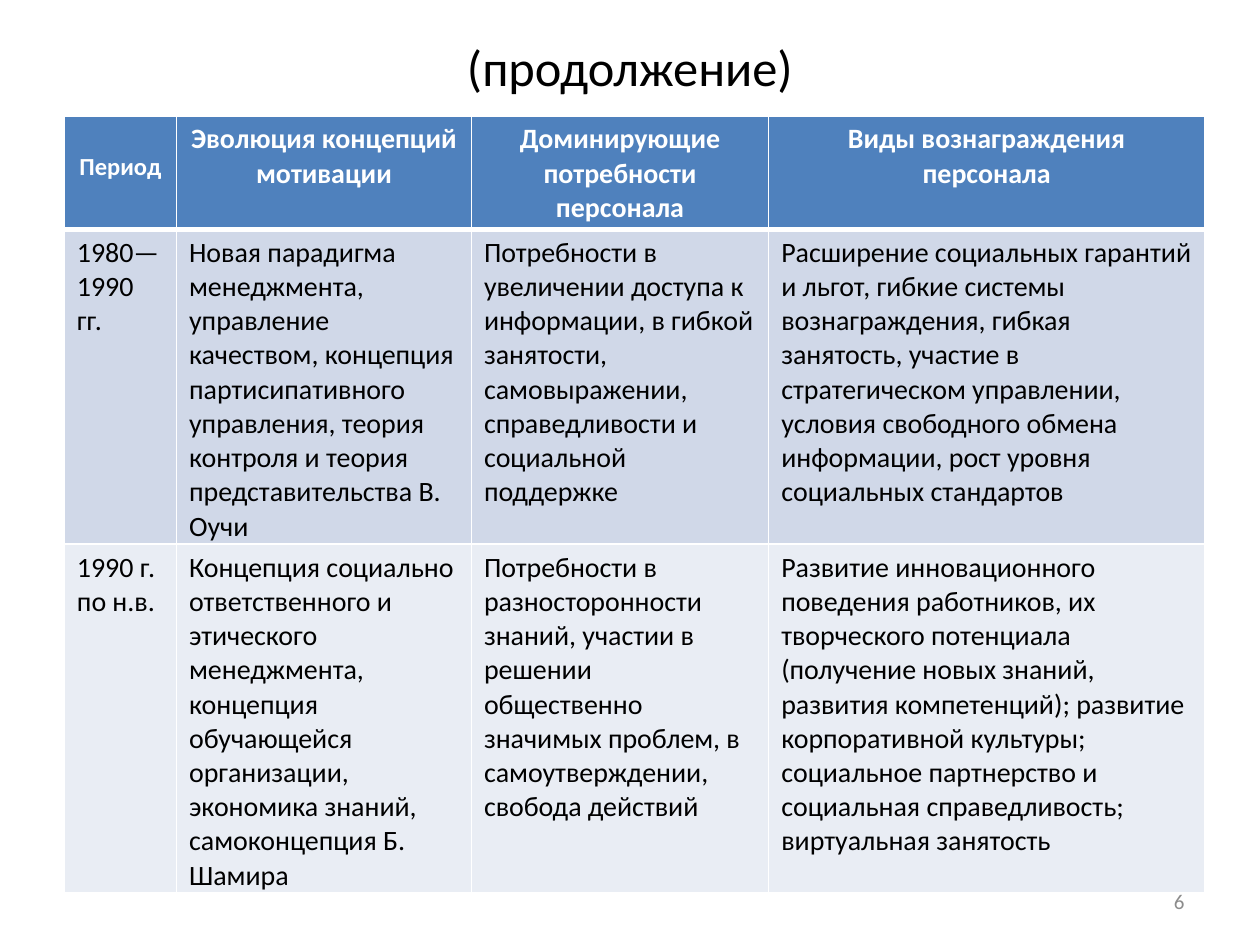
from lxml.etree import SubElement
from pptx import Presentation
from pptx.dml.color import RGBColor as RGB
from pptx.enum.text import MSO_ANCHOR as Anchor, PP_ALIGN as Align
from pptx.oxml.ns import qn
from pptx.util import Pt

COLORS = {"black": "000000", "white": "FFFFFF", "gray": "8C8C8C",
          "header": "4F81BD", "odd": "D0D8E8", "even": "E9EDF4"}
FONT = "Calibri"
TITLE = "(продолжение)"
PAGE_NUMBER = "6"
HEADERS = ["Период", "Эволюция концепций мотивации",
           "Доминирующие потребности персонала", "Виды вознаграждения персонала"]
PERIODS = [
    ["1980— 1990 гг.",
     "Новая парадигма менеджмента, управление качеством, концепция партисипативного "
     "управления, теория контроля и теория представительства В. Оучи",
     "Потребности в увеличении доступа к информации, в гибкой занятости, "
     "самовыражении, справедливости и социальной поддержке",
     "Расширение социальных гарантий и льгот, гибкие системы вознаграждения, гибкая "
     "занятость, участие в стратегическом управлении, условия свободного обмена "
     "информации, рост уровня социальных стандартов"],
    ["1990 г. по н.в.",
     "Концепция социально ответственного и этического менеджмента, концепция "
     "обучающейся организации, экономика знаний, самоконцепция Б. Шамира",
     "Потребности в разносторонности знаний, участии в решении общественно значимых "
     "проблем, в самоутверждении, свобода действий",
     "Развитие инновационного поведения работников, их творческого потенциала "
     "(получение новых знаний, развития компетенций); развитие корпоративной культуры; "
     "социальное партнерство и социальная справедливость; виртуальная занятость"],
]
COLUMN_WIDTHS = [64.1, 168.5, 169.9, 249.1]
ROW_HEIGHTS = [50.4, 165, 174]
TABLE_LEFT, TABLE_TOP, TABLE_HEIGHT = 36.8, 66.2, 444
PERIOD_TOP_MARGIN = 20.7


def write(frame, text, color, align=Align.LEFT, **font_format):
    para = frame.paragraphs[0]
    para.alignment = align
    span = para.add_run()
    span.text = text
    span.font.color.rgb = RGB.from_string(COLORS[color])
    for name, value in {"name": FONT, **font_format}.items():
        setattr(span.font, name, value)


def add_text(page, area, *text_args, **font_format):
    frame = page.shapes.add_textbox(*map(Pt, area)).text_frame
    frame.word_wrap = True
    frame.vertical_anchor = Anchor.MIDDLE
    write(frame, *text_args, **font_format)


def add_borders(cell, row):
    """White 1 pt borders, with a 3 pt line between the header and the body."""
    widths = {"L": 1, "R": 1, "T": 3 if row == 1 else 1, "B": 3 if row == 0 else 1}
    properties = cell._tc.get_or_add_tcPr()
    for side, width in widths.items():
        line = SubElement(properties, qn(f"a:ln{side}"), w=str(Pt(width)))
        fill = SubElement(line, qn("a:solidFill"))
        SubElement(fill, qn("a:srgbClr"), val=COLORS["white"])


def add_table(page):
    rows = [HEADERS, *PERIODS]
    holder = page.shapes.add_table(
        len(rows), len(HEADERS), Pt(TABLE_LEFT), Pt(TABLE_TOP),
        Pt(sum(COLUMN_WIDTHS)), Pt(TABLE_HEIGHT))
    table = holder.table
    for column, width in zip(table.columns, COLUMN_WIDTHS):
        column.width = Pt(width)
    for row, height in zip(table.rows, ROW_HEIGHTS):
        row.height = Pt(height)
    holder.height = Pt(TABLE_HEIGHT)

    for r, (texts, fill) in enumerate(zip(rows, ("header", "odd", "even"))):
        for c, text in enumerate(texts):
            cell = table.cell(r, c)
            add_borders(cell, r)
            cell.fill.solid()
            cell.fill.fore_color.rgb = RGB.from_string(COLORS[fill])
            if r == 0:
                size = 14 if c == 0 else 16
                write(cell.text_frame, text, "white", Align.CENTER, size=Pt(size), bold=True)
            else:
                write(cell.text_frame, text, "black", size=Pt(16), bold=False)
    table.cell(0, 0).margin_top = Pt(PERIOD_TOP_MARGIN)


def main():
    deck = Presentation()
    deck.slide_width, deck.slide_height = Pt(720), Pt(540)
    page = deck.slides.add_slide(deck.slide_layouts[6])
    add_text(page, (36, 21.6, 648, 33), TITLE, "black", Align.CENTER, size=Pt(28.8))
    add_text(page, (516, 500.4, 168, 28.8), PAGE_NUMBER, "gray", Align.RIGHT, size=Pt(12))
    add_table(page)
    deck.save("out.pptx")


if __name__ == "__main__":
    main()
